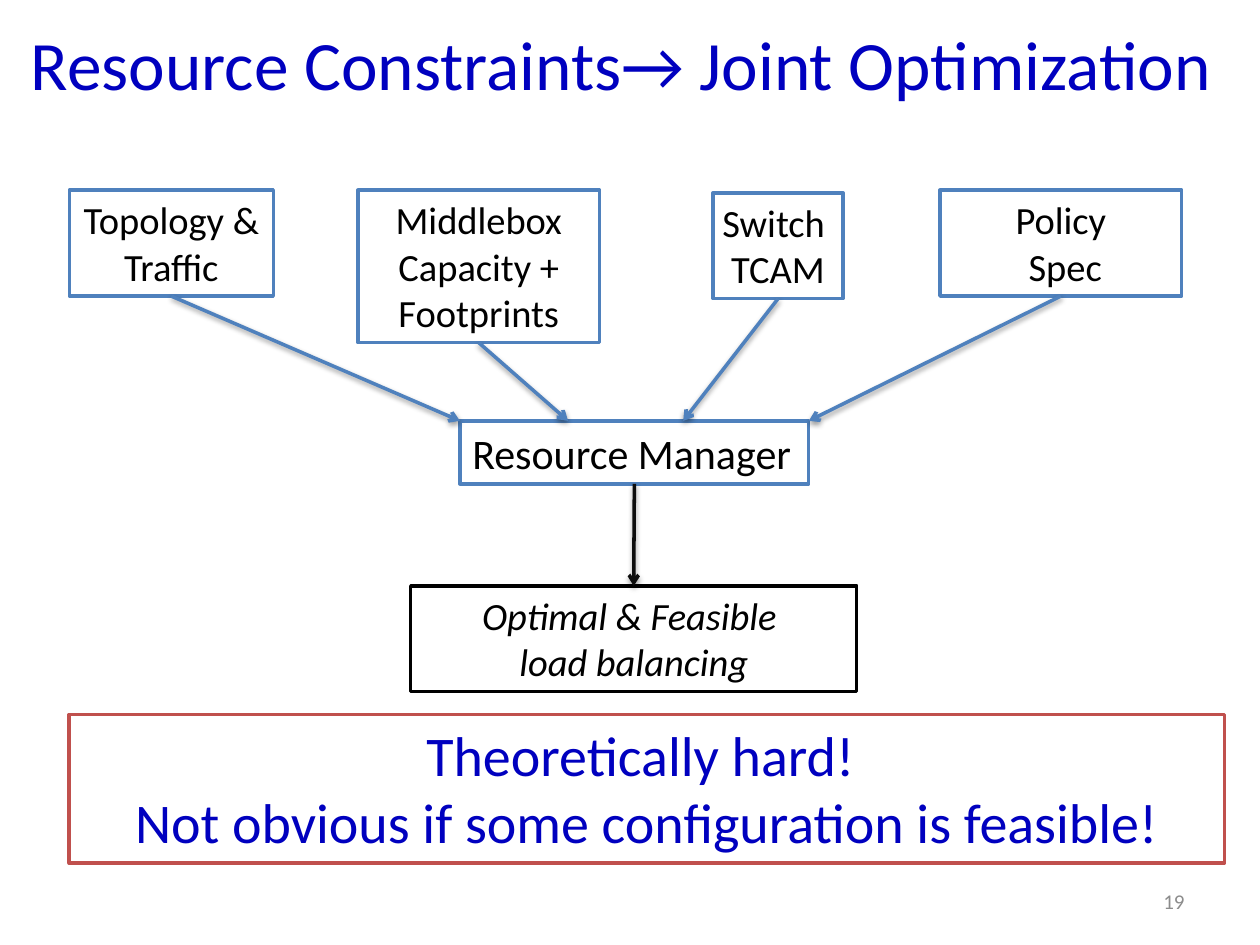
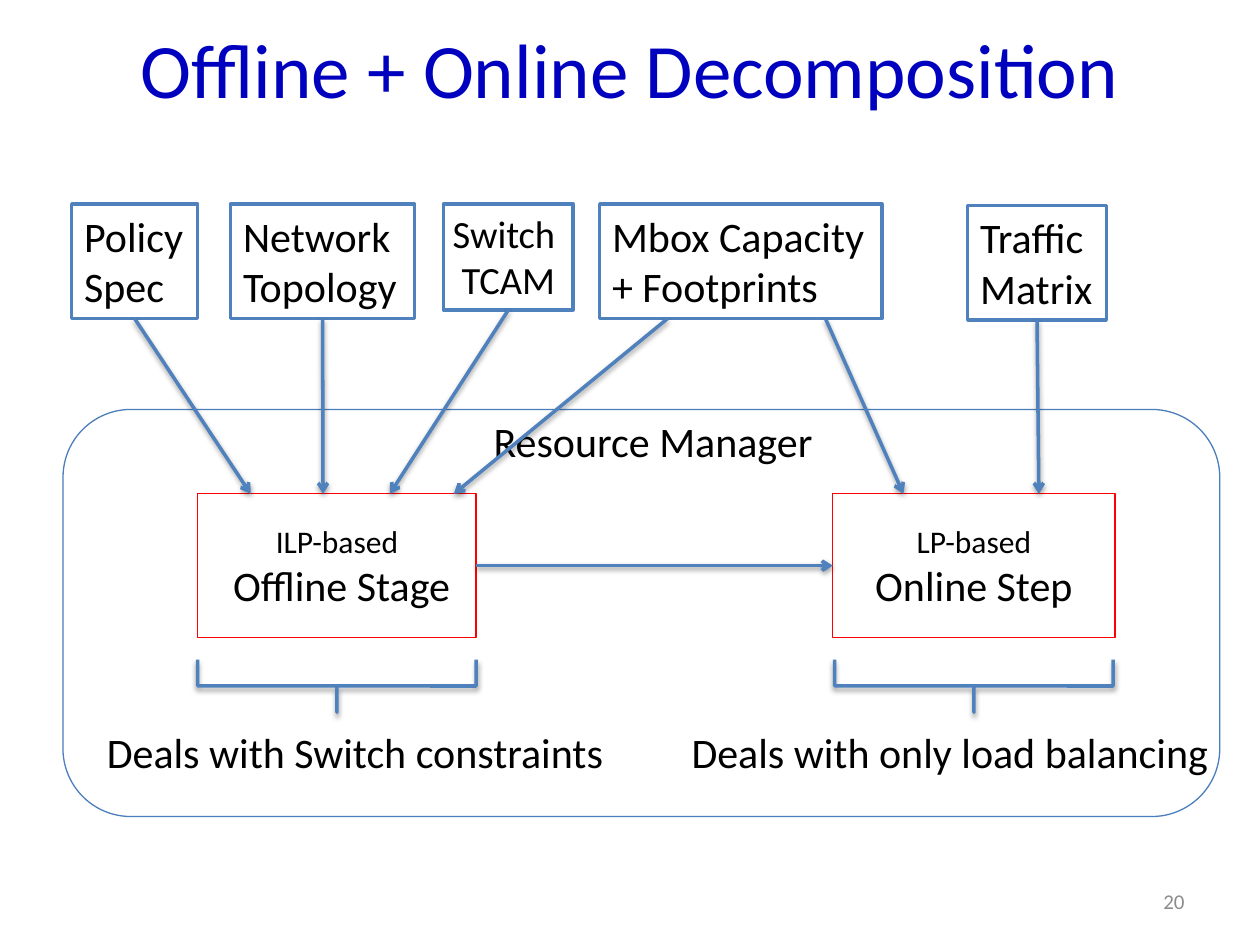
"""Build two slides on resource constraints and their offline and online handling."""
from dataclasses import dataclass
from typing import Optional

import lxml.etree
import pptx
import pptx.dml.color
import pptx.enum.shapes
import pptx.enum.text
import pptx.oxml
import pptx.oxml.ns
import pptx.util

Pt = pptx.util.Pt
SHAPE = pptx.enum.shapes.MSO_SHAPE
ANCHOR = pptx.enum.text.MSO_ANCHOR
ALIGN = pptx.enum.text.PP_ALIGN

FONT = "Calibri"
BLACK, WHITE, GRAY = "000000", "FFFFFF", "8C8C8C"
TITLE_BLUE, BLUE, CONTAINER_BLUE = "0000BF", "4F81BD", "4B7EBC"
NEAR_BLACK, BRICK, RED = "0D0D0D", "C0504D", "FF0000"

TOP, LEFT, BOTTOM, RIGHT = range(4)
SHADOW = (
    f'<a:effectLst {pptx.oxml.ns.nsdecls("a")}>'
    f'<a:outerShdw blurRad="{Pt(3.1)}" dist="{Pt(1.6)}" dir="5400000" rotWithShape="0">'
    '<a:srgbClr val="000000"><a:alpha val="38000"/></a:srgbClr>'
    "</a:outerShdw></a:effectLst>"
)


@dataclass(frozen=True)
class Box:
    """A text block, framed when it has a line colour."""

    x: float
    y: float
    w: float
    h: float
    lines: tuple[str, ...] = ()
    size: float = 22
    first_size: Optional[float] = None
    color: str = BLACK
    align: ALIGN = ALIGN.CENTER
    anchor: ANCHOR = ANCHOR.TOP
    italic: bool = False
    wrap: bool = True
    line: Optional[str] = None
    line_width: float = 2
    fill: Optional[str] = None
    shape: SHAPE = SHAPE.RECTANGLE


@dataclass(frozen=True)
class End:
    """A place on one side of a named box, as a fraction of that side."""

    box: str
    side: int
    share: float = 0.5


@dataclass(frozen=True)
class Arrow:
    """An arrow between two box sides."""

    start: End
    end: End
    color: str = BLUE


def rgb(color: str) -> pptx.dml.color.RGBColor:
    """Turn a hex string into a colour."""
    return pptx.dml.color.RGBColor.from_string(color)


def framed(x: float, y: float, w: float, h: float, *lines: str, **style) -> Box:
    """Describe a white box with a blue frame."""
    return Box(x, y, w, h, lines, **{"line": BLUE, "fill": WHITE, **style})


def stage(x: float, w: float, *lines: str) -> Box:
    """Describe a red-framed stage of the resource manager."""
    return Box(x, 282.2, w, 82.1, lines, 24, 18, anchor=ANCHOR.MIDDLE,
               line=RED, line_width=0.75)


def label(x: float, y: float, w: float, text: str) -> Box:
    """Describe an unframed label."""
    return Box(x, y, w, 36, (text,), 24, align=ALIGN.LEFT)


def draw_box(slide, box: Box):
    """Draw a box with its text and return the shape."""
    area = [Pt(v) for v in (box.x, box.y, box.w, box.h)]
    if box.line is None:
        s = slide.shapes.add_textbox(*area)
    else:
        s = slide.shapes.add_shape(box.shape, *area)
        s.shadow.inherit = False
        s.line.color.rgb = rgb(box.line)
        s.line.width = Pt(box.line_width)
        if box.fill is None:
            s.fill.background()
        else:
            s.fill.solid()
            s.fill.fore_color.rgb = rgb(box.fill)
    tf = s.text_frame
    tf.word_wrap = box.wrap
    tf.vertical_anchor = box.anchor
    for i, text in enumerate(box.lines):
        p = tf.add_paragraph() if i else tf.paragraphs[0]
        p.alignment = box.align
        r = p.add_run()
        r.text = text
        r.font.name = FONT
        r.font.size = Pt(box.size if i or box.first_size is None else box.first_size)
        r.font.italic = box.italic
        r.font.color.rgb = rgb(box.color)
    return s


def add_shadow(s) -> None:
    """Give a shape or connector a soft shadow below it."""
    s._element.spPr.append(pptx.oxml.parse_xml(SHADOW))


def place(end: End, boxes: dict[str, Box]) -> tuple[int, int]:
    """Find the slide position of an arrow end."""
    b = boxes[end.box]
    if end.side in (TOP, BOTTOM):
        return Pt(b.x + b.w * end.share), Pt(b.y + b.h * (end.side == BOTTOM))
    return Pt(b.x + b.w * (end.side == RIGHT)), Pt(b.y + b.h * end.share)


def draw_arrow(slide, arrow: Arrow, boxes: dict[str, Box], shapes: dict) -> None:
    """Draw an arrow and join it to the boxes at side middles."""
    c = slide.shapes.add_connector(
        pptx.enum.shapes.MSO_CONNECTOR.STRAIGHT,
        *place(arrow.start, boxes), *place(arrow.end, boxes))
    for end, join in ((arrow.start, c.begin_connect), (arrow.end, c.end_connect)):
        if end.share == 0.5:
            join(shapes[end.box], end.side)
    c.line.color.rgb = rgb(arrow.color)
    c.line.width = Pt(2)
    ln = c._element.spPr.find(pptx.oxml.ns.qn("a:ln"))
    lxml.etree.SubElement(ln, pptx.oxml.ns.qn("a:tailEnd"), type="arrow")
    add_shadow(c)


def draw_brace(slide, box: Box) -> None:
    """Draw a square brace centred under a stage, pointing down."""
    depth, span, middle = 30.2, 159.1, 392
    s = slide.shapes.add_shape(
        SHAPE.RIGHT_BRACE, Pt(box.x + (box.w - depth) / 2), Pt(middle - span / 2),
        Pt(depth), Pt(span))
    s.rotation = 90
    s.adjustments[0], s.adjustments[1] = 0, 0.5
    s.fill.background()
    s.line.color.rgb = rgb(BLUE)
    s.line.width = Pt(2)
    add_shadow(s)


def build_slide(prs, title: Box, number: int, boxes: dict[str, Box],
                arrows: list[Arrow], braced: tuple[str, ...] = ()) -> None:
    """Add a slide with title, boxes, braces, arrows and page number."""
    slide = prs.slides.add_slide(prs.slide_layouts[6])
    shapes = {name: draw_box(slide, box) for name, box in boxes.items()}
    draw_box(slide, title)
    for name in braced:
        draw_brace(slide, boxes[name])
    for arrow in arrows:
        draw_arrow(slide, arrow, boxes, shapes)
    draw_box(slide, Box(516.2, 500.4, 167.8, 28.8, (str(number),), 12, color=GRAY,
                        align=ALIGN.RIGHT, anchor=ANCHOR.MIDDLE))


def title_box(x: float, y: float, w: float, h: float, text: str, size: float) -> Box:
    """Describe a slide title."""
    return Box(x, y, w, h, (text,), size, color=TITLE_BLUE, anchor=ANCHOR.MIDDLE)


def build_constraints(prs) -> None:
    """Build the slide on joint optimization."""
    boxes = {
        "manager": framed(262.8, 240.5, 199.4, 36, "Resource Manager", size=24,
                          align=ALIGN.LEFT, wrap=False),
        "topology": framed(39.6, 108.7, 116.6, 60.5, "Topology & Traffic"),
        "middlebox": framed(204.5, 108.7, 138.2, 87.1, "Middlebox",
                            "Capacity + Footprints"),
        "switch": framed(407.5, 110.2, 74.2, 60.5, "Switch ", "TCAM", wrap=False),
        "policy": framed(537.1, 108.7, 138.2, 60.5, "Policy", " Spec"),
        "result": framed(234.7, 334.8, 254.9, 60.5, "Optimal & Feasible ",
                         "load balancing", italic=True, line=BLACK),
        "verdict": framed(39.6, 408.2, 660.2, 85, "Theoretically hard! ",
                          "Not obvious if some configuration is feasible!",
                          size=32, color=TITLE_BLUE, line=BRICK),
    }
    targets = {"topology": 0, "middlebox": 0.31, "switch": 0.64, "policy": 1}
    arrows = [Arrow(End(name, BOTTOM), End("manager", TOP, share))
              for name, share in targets.items()]
    arrows.append(Arrow(End("manager", BOTTOM), End("result", TOP), NEAR_BLACK))
    title = title_box(0, 0, 710, 72, "Resource Constraints→ Joint Optimization", 39.6)
    build_slide(prs, title, 19, boxes, arrows)


def build_decomposition(prs) -> None:
    """Build the slide on the offline and online stages."""
    left = {"size": 24, "align": ALIGN.LEFT, "wrap": False}
    boxes = {
        "container": Box(36, 234, 661, 232.6, line=CONTAINER_BLUE, line_width=0.75,
                         shape=SHAPE.ROUNDED_RECTANGLE),
        "manager": label(275, 234, 226.8, "Resource Manager"),
        "policy": framed(41, 116.6, 72, 65.5, "Policy", "Spec", **left),
        "network": framed(131.8, 116.6, 105.1, 65.5, "Network", "Topology", **left),
        "switch": framed(253.4, 116.6, 74.2, 60.5, "Switch ", "TCAM", wrap=False),
        "mbox": framed(342.7, 116.6, 161.3, 65.5, "Mbox Capacity", "+ Footprints",
                       **left),
        "traffic": framed(553, 117.4, 79.2, 65.5, "Traffic", "Matrix", **left),
        "offline": stage(113, 159.1, "ILP-based", " Offline Stage"),
        "online": stage(475.9, 161.3, "LP-based", "Online Step"),
        "offline note": label(54, 411.8, 328.3, "Deals with Switch constraints"),
        "online note": label(388.1, 411.8, 325, "Deals with only load balancing"),
    }
    inputs = [
        ("policy", 0.5, "offline", 0.19),
        ("network", 0.5, "offline", 0.45),
        ("switch", 0.5, "offline", 0.69),
        ("mbox", 0.24, "offline", 0.92),
        ("mbox", 0.8, "online", 0.25),
        ("traffic", 0.5, "online", 0.73),
    ]
    arrows = [Arrow(End(source, BOTTOM, leave), End(target, TOP, arrive))
              for source, leave, target, arrive in inputs]
    arrows.append(Arrow(End("offline", RIGHT), End("online", LEFT)))
    title = title_box(36, 4.3, 648, 69.1, "Offline + Online Decomposition", 44)
    build_slide(prs, title, 20, boxes, arrows, ("offline", "online"))


def main() -> None:
    """Build and save the presentation."""
    prs = pptx.Presentation()
    prs.slide_width, prs.slide_height = Pt(720), Pt(540)
    build_constraints(prs)
    build_decomposition(prs)
    prs.save("out.pptx")


if __name__ == "__main__":
    main()
